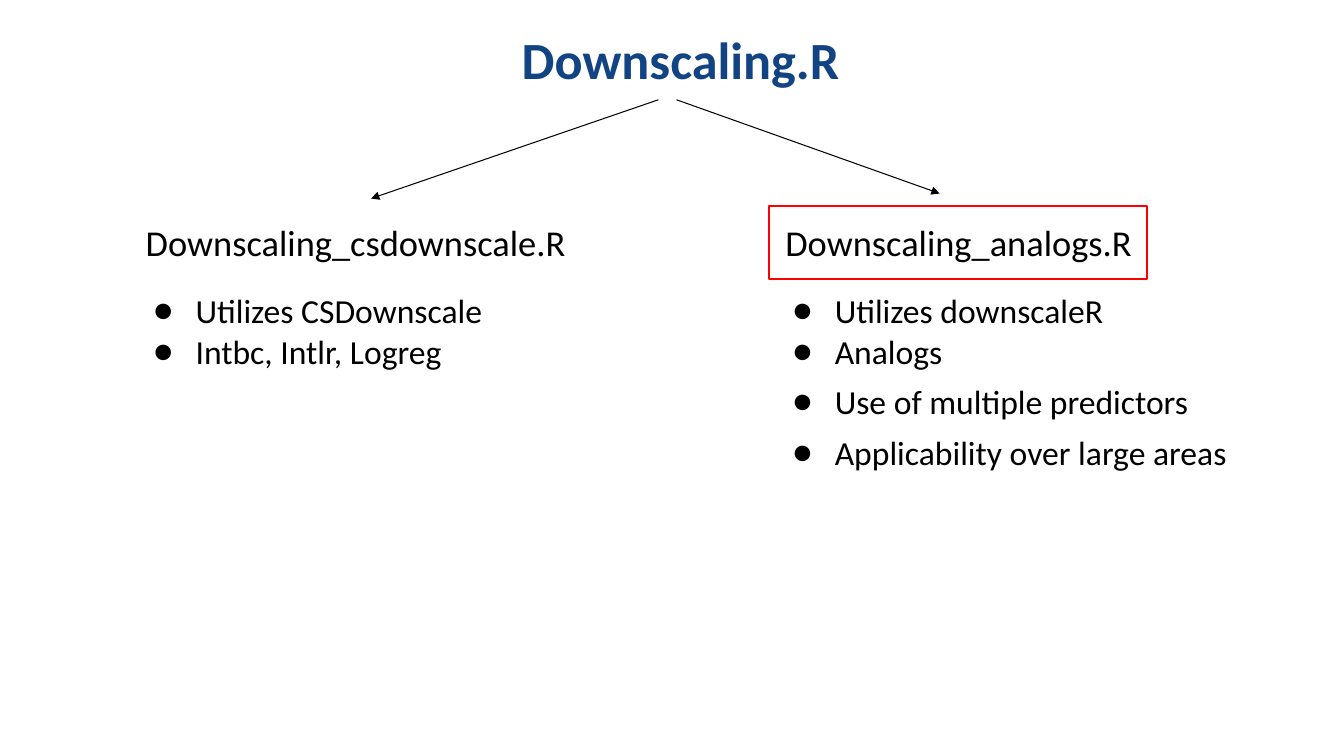
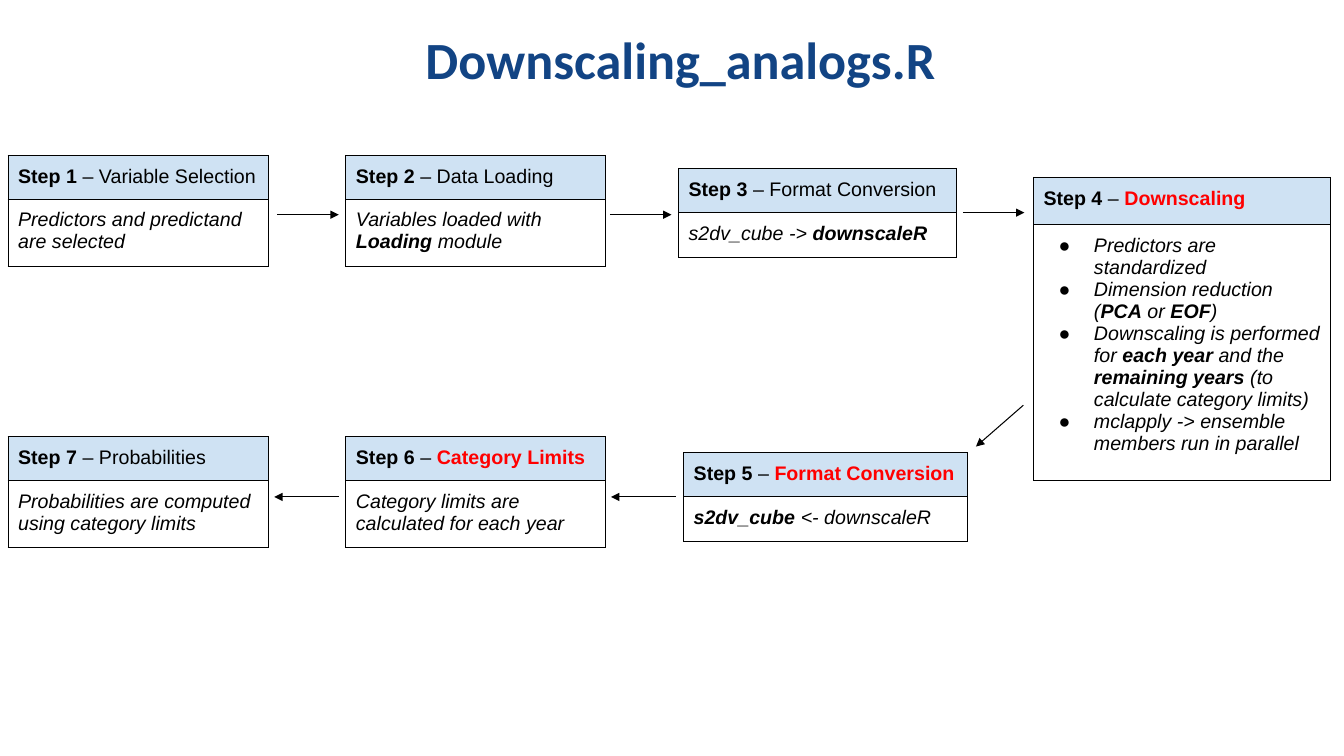
"""Build two slides that explain the downscaling scripts and their steps."""
from dataclasses import dataclass
from typing import NamedTuple

from lxml import etree
from pptx import Presentation
from pptx.dml.color import RGBColor
from pptx.enum.shapes import MSO_CONNECTOR, MSO_SHAPE
from pptx.enum.text import MSO_ANCHOR, PP_ALIGN
from pptx.oxml.ns import qn
from pptx.util import Inches, Pt

STRAIGHT = MSO_CONNECTOR.STRAIGHT
RECT = MSO_SHAPE.RECTANGLE
MIDDLE = MSO_ANCHOR.MIDDLE
TOP = MSO_ANCHOR.TOP
CENTER = PP_ALIGN.CENTER


@dataclass(frozen=True)
class Theme:
    """Colours, fonts and type sizes."""
    blue: str = "124484"
    black: str = "000000"
    red: str = "FF0000"
    band: str = "CFE2F3"
    sans: str = "Calibri"
    cell: str = "Arial"
    title: float = 37.3
    head: float = 26
    list: float = 24
    step: float = 14
    thin: float = 0.75
    frame: float = 1.5


THEME = Theme()


class Run(NamedTuple):
    """A piece of text in one style."""
    text: str
    bold: bool = False
    color: str = THEME.black


class Box(NamedTuple):
    """Left, top, width and height in inches."""
    x: float
    y: float
    w: float
    h: float


class Arrow(NamedTuple):
    """Start and end points in inches."""
    x1: float
    y1: float
    x2: float
    y2: float


class Branch(NamedTuple):
    """A script with its heading and list of points."""
    name: str
    head: Box
    list: Box
    points: list[str]


@dataclass(frozen=True)
class Step:
    """A two-row table for one step."""
    x: float
    y: float
    w: float
    rows: tuple[float, float]
    label: Run
    body: list[list[Run]]


SHORT = (0.42, 0.64)
EVEN = (0.44, 0.44)
TALL = (0.47, 2.4)

BRANCHES = [
    Branch("Downscaling_csdownscale.R", Box(0.08, 2.04, 6.9, 0.73),
           Box(1.37, 2.84, 5.4, 1.03),
           ["Utilizes CSDownscale", "Intbc, Intlr, Logreg"]),
    Branch("Downscaling_analogs.R", Box(6.06, 2.04, 6.9, 0.73),
           Box(7.71, 2.84, 5.4, 3.2),
           ["Utilizes downscaleR", "Analogs", "Use of multiple predictors",
            "Applicability over large areas"]),
]
FORKS = [Arrow(6.53, 0.99, 3.68, 1.97), Arrow(6.71, 0.99, 9.32, 1.92)]

STEPS = [
    Step(0.08, 1.54, 2.58, SHORT, Run("Variable Selection"),
         [[Run("Predictors and predictand are selected")]]),
    Step(3.43, 1.54, 2.58, SHORT, Run("Data Loading"),
         [[Run("Variables loaded with "), Run("Loading", True), Run(" module")]]),
    Step(6.73, 1.67, 2.76, EVEN, Run("Format Conversion"),
         [[Run("s2dv_cube -> "), Run("downscaleR", True)]]),
    Step(10.25, 1.76, 2.95, TALL, Run("Downscaling", True, THEME.red),
         [[Run("Predictors are standardized")],
          [Run("Dimension reduction ("), Run("PCA", True), Run(" or "),
           Run("EOF", True), Run(")")],
          [Run("Downscaling is performed for "), Run("each year", True),
           Run(" and the "), Run("remaining years ", True),
           Run("(to calculate category limits)")],
          [Run("mclapply -> ensemble members run in parallel")]]),
    Step(6.78, 4.49, 2.82, EVEN, Run("Format Conversion", True, THEME.red),
         [[Run("s2dv_cube ", True), Run("<- downscaleR")]]),
    Step(3.43, 4.33, 2.58, SHORT, Run("Category Limits", True, THEME.red),
         [[Run("Category limits are calculated for each year")]]),
    Step(0.08, 4.33, 2.58, SHORT, Run("Probabilities"),
         [[Run("Probabilities are computed using category limits")]]),
]
FLOW = [
    Arrow(2.75, 2.13, 3.36, 2.13), Arrow(6.05, 2.13, 6.66, 2.13),
    Arrow(9.55, 2.11, 10.16, 2.11), Arrow(10.15, 4.02, 9.68, 4.43),
    Arrow(6.7, 4.93, 6.06, 4.93), Arrow(3.36, 4.93, 2.72, 4.93),
]


def ink(text) -> RGBColor:
    """Turn a hex string into a colour."""
    return RGBColor.from_string(text)


def style(font, name: str, size: float, color: str, bold=False, slant=False) -> None:
    """Set the look of a font."""
    font.name, font.size = name, Pt(size)
    font.bold, font.italic = bold, slant
    font.color.rgb = ink(color)


def bullet(para, name: str, hang: float) -> None:
    """Give a paragraph a round bullet with a hanging indent."""
    props = para._p.get_or_add_pPr()
    props.set("marL", str(Inches(0.5)))
    props.set("indent", str(-Inches(hang)))
    tint = etree.SubElement(props, qn("a:buClr"))
    etree.SubElement(tint, qn("a:srgbClr"), val=THEME.black)
    etree.SubElement(props, qn("a:buFont"), typeface=name)
    etree.SubElement(props, qn("a:buChar"), char="●")


def add_text(slide, box: Box, lines: list[str]):
    """Add a wrapped text box and return its frame."""
    frame = slide.shapes.add_textbox(*map(Inches, box)).text_frame
    frame.word_wrap = True
    frame.margin_left = frame.margin_right = Inches(0.07)
    frame.margin_top = frame.margin_bottom = Inches(0.04)
    frame.text = "\n".join(lines)
    return frame


def add_head(slide, box: Box, text: str, size: float, color: str, bold=False) -> None:
    """Add a centred one-line heading."""
    frame = add_text(slide, box, [text])
    frame.vertical_anchor = MIDDLE
    para = frame.paragraphs[0]
    para.alignment = CENTER
    style(para.runs[0].font, THEME.sans, size, color, bold)


def add_list(slide, box: Box, points: list[str]) -> None:
    """Add a bulleted list, looser after its first two points."""
    frame = add_text(slide, box, points)
    frame.vertical_anchor = TOP
    for rank, para in enumerate(frame.paragraphs):
        bullet(para, THEME.sans, 0.42)
        if rank > 1:
            para.line_spacing = 1.25
        style(para.runs[0].font, THEME.sans, THEME.list, THEME.black)


def add_arrow(slide, arrow: Arrow) -> None:
    """Add a thin line with a head at its end."""
    line = slide.shapes.add_connector(STRAIGHT, *map(Inches, arrow))
    line.line.color.rgb = ink(THEME.black)
    line.line.width = Pt(THEME.thin)
    etree.SubElement(line.line._get_or_add_ln(), qn("a:tailEnd"), type="triangle")
    etree.SubElement(line._element.spPr, qn("a:effectLst"))


def add_frame(slide, box: Box) -> None:
    """Add an unfilled red outline."""
    shape = slide.shapes.add_shape(RECT, *map(Inches, box))
    shape.shadow.inherit = False
    shape.fill.background()
    shape.line.color.rgb = ink(THEME.red)
    shape.line.width = Pt(THEME.frame)


def edge(cell) -> None:
    """Draw a thin border on all sides of a cell."""
    props = cell._tc.get_or_add_tcPr()
    for side in ("lnL", "lnR", "lnT", "lnB"):
        line = etree.SubElement(props, qn(f"a:{side}"), w=str(Pt(THEME.thin)))
        fill = etree.SubElement(line, qn("a:solidFill"))
        etree.SubElement(fill, qn("a:srgbClr"), val=THEME.black)


def fill_cell(cell, paras: list[list[Run]], slant: bool) -> None:
    """Write styled paragraphs in a cell, with bullets if there are several."""
    edge(cell)
    cell.margin_left = cell.margin_right = Inches(0.1)
    cell.margin_top = cell.margin_bottom = Inches(0.1)
    frame = cell.text_frame
    frame.text = "\n" * (len(paras) - 1)
    for para, runs in zip(frame.paragraphs, paras):
        if len(paras) > 1:
            bullet(para, THEME.cell, 0.35)
        for part in runs:
            run = para.add_run()
            run.text = part.text
            style(run.font, THEME.cell, THEME.step, part.color, part.bold, slant)


def add_step(slide, rank: int, step: Step) -> None:
    """Add the table of one step."""
    box = Box(step.x, step.y, step.w, sum(step.rows))
    table = slide.shapes.add_table(2, 1, *map(Inches, box)).table
    table.first_row = table.horz_banding = False
    for row, high in zip(table.rows, step.rows):
        row.height = Inches(high)
    head, body = table.cell(0, 0), table.cell(1, 0)
    fill_cell(head, [[Run(f"Step {rank}", True), Run(" – "), step.label]], False)
    fill_cell(body, step.body, True)
    head.fill.solid()
    head.fill.fore_color.rgb = ink(THEME.band)
    body.fill.background()


def add_slide(deck, title: str):
    """Add a blank slide with a title."""
    slide = deck.slides.add_slide(deck.slide_layouts[6])
    add_head(slide, Box(0.54, 0, 12.42, 1.16), title, THEME.title, THEME.blue, True)
    return slide


def main() -> None:
    """Build and save the deck."""
    deck = Presentation()
    deck.slide_width, deck.slide_height = Inches(13.33), Inches(7.5)

    slide = add_slide(deck, "Downscaling.R")
    for arrow in FORKS:
        add_arrow(slide, arrow)
    for branch in BRANCHES:
        add_head(slide, branch.head, branch.name, THEME.head, THEME.black)
        add_list(slide, branch.list, branch.points)
    add_frame(slide, Box(7.63, 2.04, 3.75, 0.73))

    slide = add_slide(deck, "Downscaling_analogs.R")
    for rank, step in enumerate(STEPS, 1):
        add_step(slide, rank, step)
    for arrow in FLOW:
        add_arrow(slide, arrow)
    deck.save("out.pptx")


if __name__ == "__main__":
    main()
